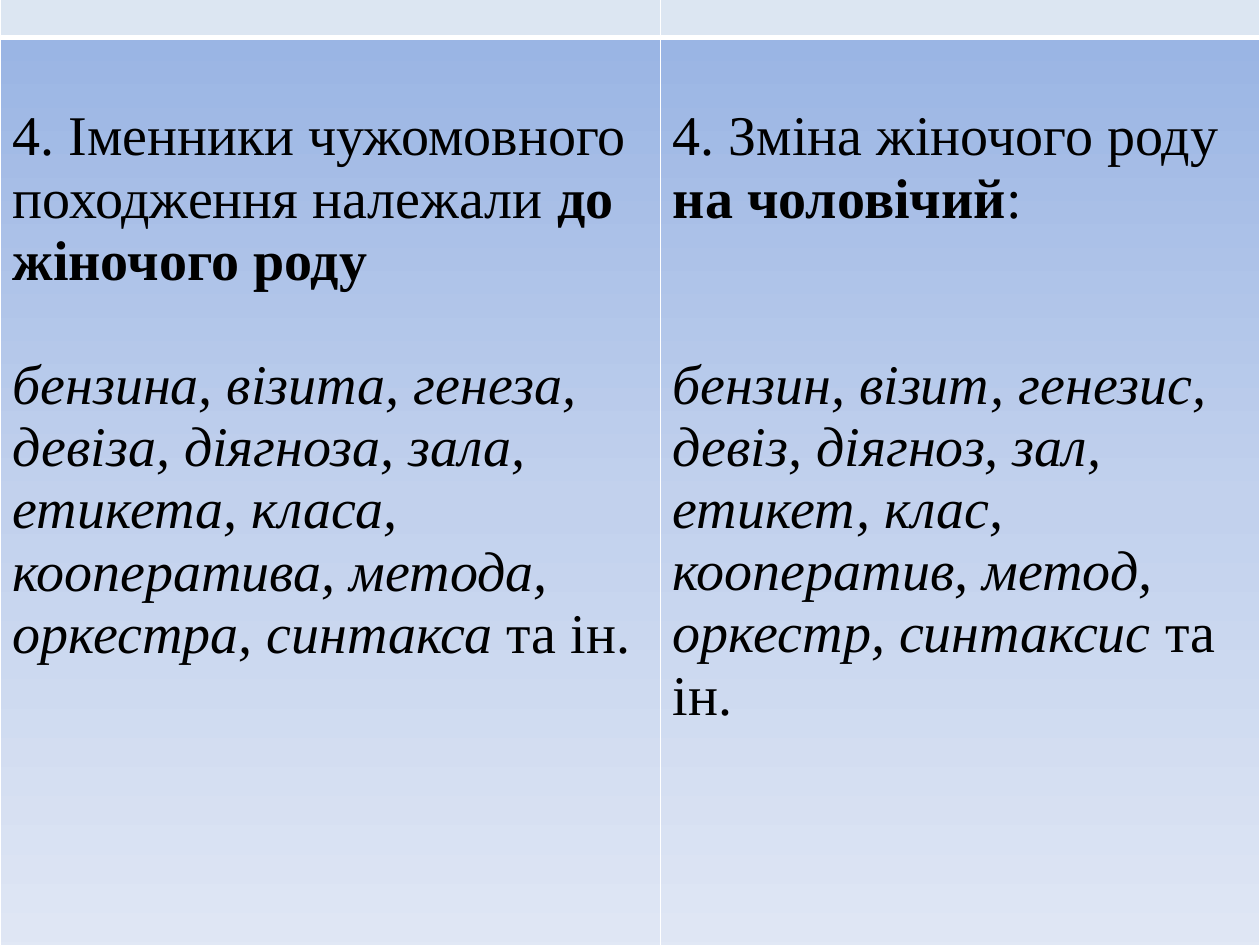
from pptx import Presentation
from pptx.dml.color import RGBColor as RGB
from pptx.oxml import parse_xml
from pptx.oxml.ns import nsdecls
from pptx.util import Pt

WHITE = RGB(0xFF, 0xFF, 0xFF)
BLACK = RGB(0, 0, 0)
HEADER = RGB(0xDC, 0xE6, 0xF2)
BODY_STOPS = [(0, RGB(0x9A, 0xB5, 0xE4)), (50, RGB(0xC2, 0xD1, 0xED)),
              (100, RGB(0xE1, 0xE8, 0xF5))]
LINE = 35.4  # height of one text line, in points


class SlideBuilder:
    font = "Times New Roman"
    size = Pt(32)

    def __init__(self, slide):
        self.s = slide

    def table(self, left, top, widths, heights):
        table = self.s.shapes.add_table(
            len(heights), len(widths), Pt(left), Pt(top),
            Pt(sum(widths)), Pt(sum(heights))).table
        table.first_row = table.horz_banding = False
        for col, width in zip(table.columns, widths):
            col.width = Pt(width)
        for row, height in zip(table.rows, heights):
            row.height = Pt(height)
        return table

    def borders(self, cell, **widths):
        tcPr = cell._tc.get_or_add_tcPr()
        for side in "LRTB":
            tcPr.append(parse_xml(
                f'<a:ln{side} {nsdecls("a")} w="{Pt(widths.get(side, 1))}">'
                f'<a:solidFill><a:srgbClr val="{WHITE}"/></a:solidFill></a:ln{side}>'))

    def gradient(self, cell, stops):
        gs = "".join(f'<a:gs pos="{pos * 1000}"><a:srgbClr val="{color}"/></a:gs>'
                     for pos, color in stops)
        cell._tc.get_or_add_tcPr().append(parse_xml(
            f'<a:gradFill {nsdecls("a")} rotWithShape="1"><a:gsLst>{gs}</a:gsLst>'
            '<a:lin ang="5400000" scaled="0"/></a:gradFill>'))

    def text(self, cell, paragraphs, gap):
        tf = cell.text_frame
        for i, runs in enumerate(paragraphs):
            p = tf.add_paragraph() if i else tf.paragraphs[0]
            if i:
                p.space_before = Pt(gap)
            for text, style in runs:
                r = p.add_run()
                r.text = text
                r.font.name, r.font.size = self.font, self.size
                r.font.color.rgb = BLACK
                r.font.bold = style == "bold"
                r.font.italic = style == "italic"


# Rule and examples of each column, with the gap between them
COLUMNS = [
    ([[("4. Іменники чужомовного походження належали ", ""),
       ("до жіночого роду", "bold")],
      [("бензина, візита, генеза, девіза, діягноза, зала, етикета, класа, "
        "кооператива, метода, оркестра, синтакса ", "italic"),
       ("та ін.", "")]], LINE),
    ([[("4. Зміна жіночого роду ", ""), ("на чоловічий", "bold"), (":", "")],
      [("бензин, візит, генезис, девіз, діягноз, зал, етикет, клас, "
        "кооператив, метод, оркестр, синтаксис ", "italic"),
       ("та ін.", "")]], 2 * LINE),
]


def main():
    prs = Presentation()
    prs.slide_width, prs.slide_height = Pt(720), Pt(540)
    b = SlideBuilder(prs.slides.add_slide(prs.slide_layouts[6]))

    table = b.table(0, -24.5, [377.3, 342.7], [46, 533.5])
    for col, (paragraphs, gap) in enumerate(COLUMNS):
        # Empty header band
        header = table.cell(0, col)
        b.borders(header, B=3)
        header.fill.solid()
        header.fill.fore_color.rgb = HEADER

        # Body cell, text starting one line down
        body = table.cell(1, col)
        b.borders(body, T=3)
        b.gradient(body, BODY_STOPS)
        body.margin_top = Pt(3.6 + LINE)
        b.text(body, paragraphs, gap)

    prs.save("out.pptx")


if __name__ == "__main__":
    main()
